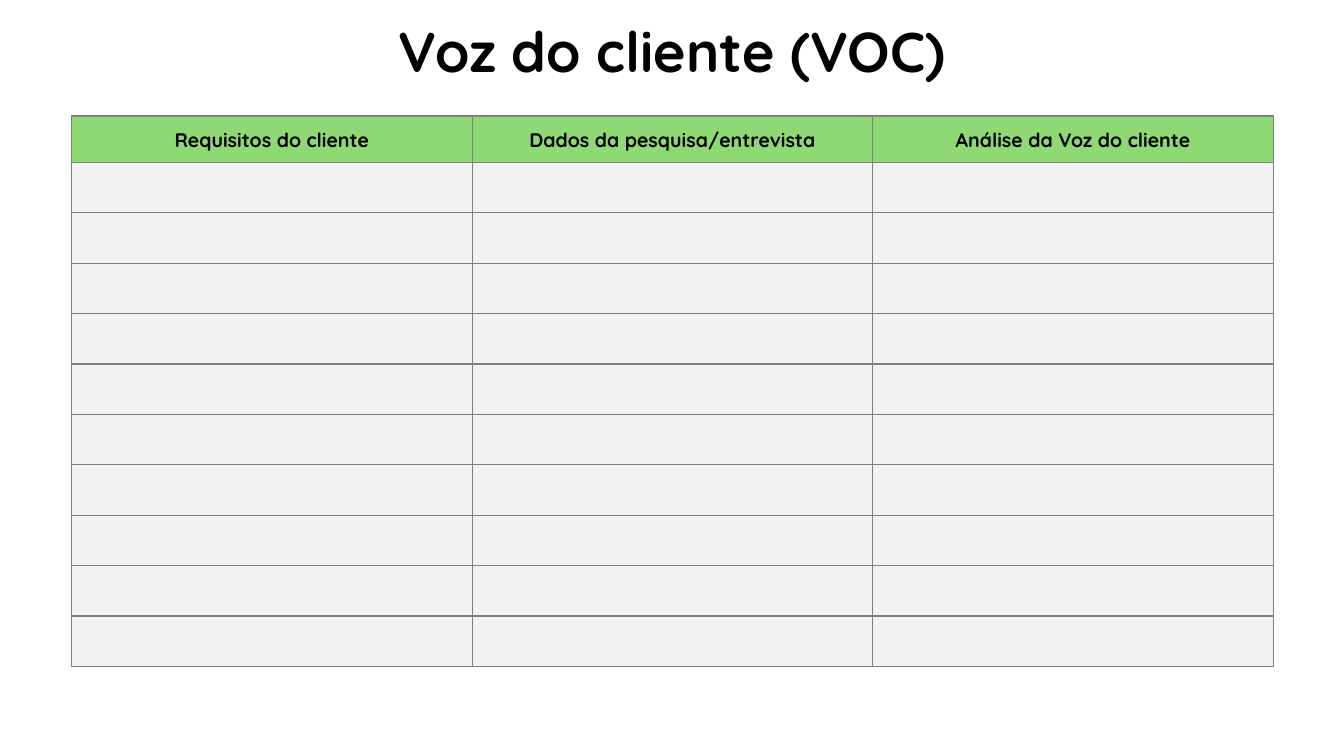
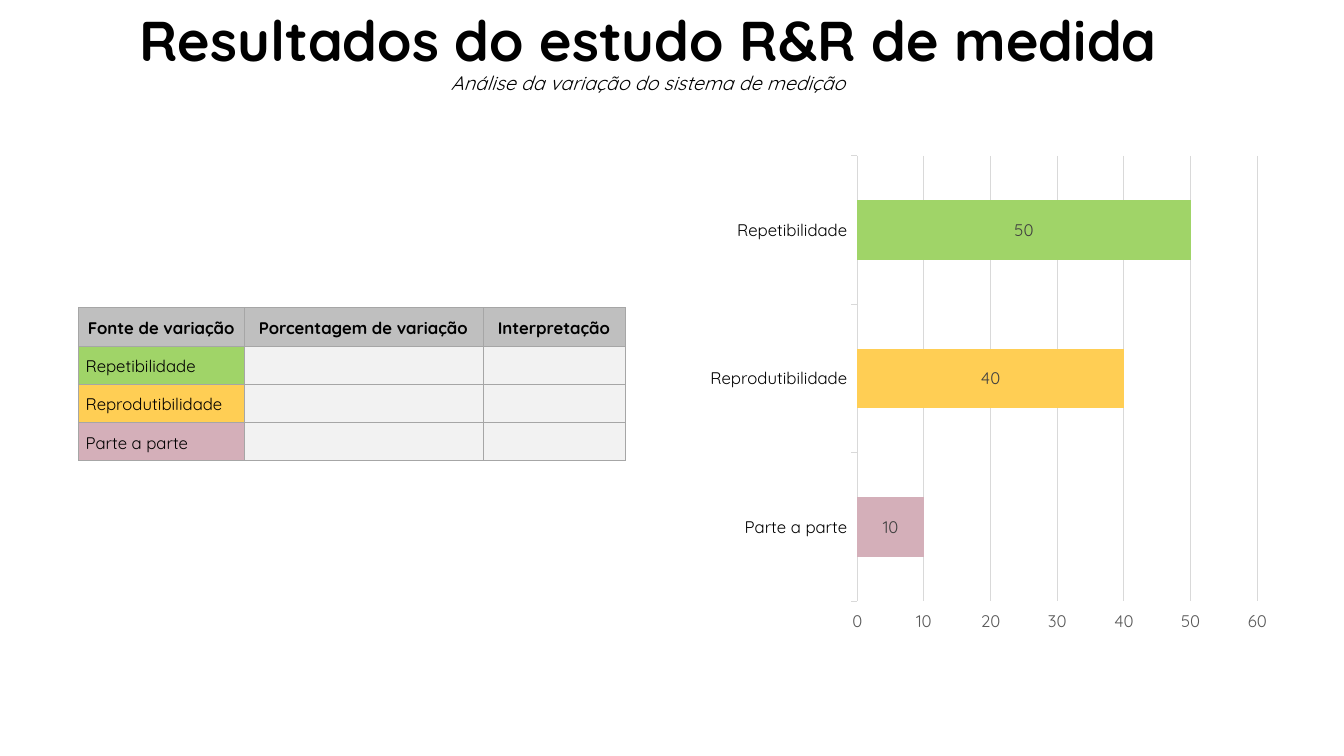
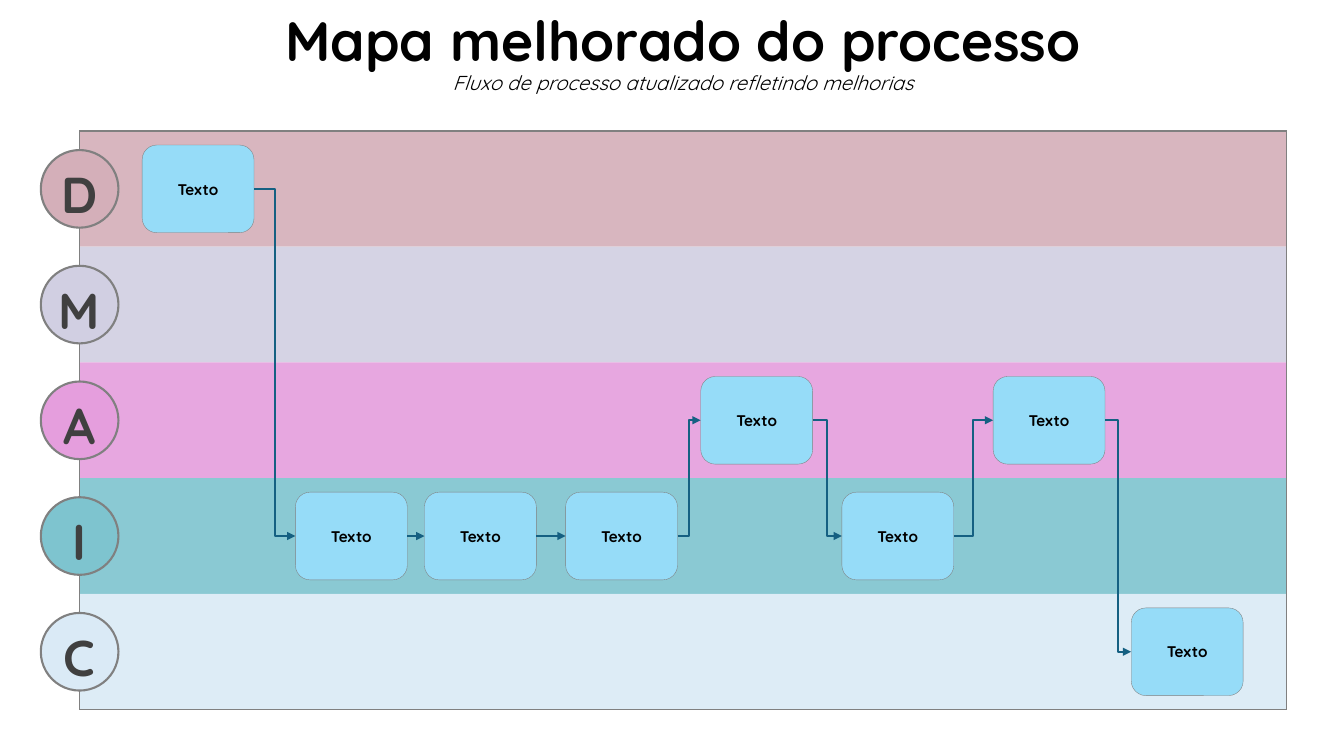
from copy import deepcopy

from lxml import etree
from pptx import Presentation
from pptx.chart.data import CategoryChartData
from pptx.dml.color import RGBColor
from pptx.enum.chart import XL_CHART_TYPE, XL_LABEL_POSITION, XL_TICK_MARK
from pptx.enum.shapes import MSO_CONNECTOR, MSO_SHAPE
from pptx.enum.text import MSO_ANCHOR, MSO_AUTO_SIZE, PP_ALIGN
from pptx.oxml.ns import qn
from pptx.util import Inches, Pt

LEFT, CENTER = PP_ALIGN.LEFT, PP_ALIGN.CENTER
TOP, MIDDLE = MSO_ANCHOR.TOP, MSO_ANCHOR.MIDDLE
NO_AUTOFIT = MSO_AUTO_SIZE.NONE
ELLIPSE, ROUNDED = MSO_SHAPE.OVAL, MSO_SHAPE.ROUNDED_RECTANGLE
STRAIGHT, ELBOW = MSO_CONNECTOR.STRAIGHT, MSO_CONNECTOR.ELBOW
BAR_STACKED = XL_CHART_TYPE.BAR_STACKED
LABEL_CENTER = XL_LABEL_POSITION.CENTER
TICK_OUTSIDE = XL_TICK_MARK.OUTSIDE

FONT = "Quicksand"
BLACK = RGBColor(0x00, 0x00, 0x00)
CHARCOAL = RGBColor(0x40, 0x40, 0x40)
AXIS_GRAY = RGBColor(0x59, 0x59, 0x59)
GRAY = RGBColor(0x80, 0x80, 0x80)
BORDER_GRAY = RGBColor(0xA6, 0xA6, 0xA6)
HEADER_GRAY = RGBColor(0xBF, 0xBF, 0xBF)
GRID_GRAY = RGBColor(0xD9, 0xD9, 0xD9)
PALE_GRAY = RGBColor(0xF2, 0xF2, 0xF2)
HEADER_GREEN = RGBColor(0x8E, 0xD9, 0x73)
GREEN = RGBColor(0xA0, 0xD4, 0x68)
YELLOW = RGBColor(0xFF, 0xCE, 0x54)
ROSE = RGBColor(0xD4, 0xAF, 0xB9)
LILAC = RGBColor(0xD1, 0xCF, 0xE2)
ORCHID = RGBColor(0xE5, 0x9E, 0xDD)
TEAL = RGBColor(0x7E, 0xC4, 0xCF)
ICE = RGBColor(0xDA, 0xEA, 0xF6)
STEP_BLUE = RGBColor(0x96, 0xDC, 0xF8)
ARROW_BLUE = RGBColor(0x15, 0x60, 0x82)

PLAIN_TABLE_STYLE = "{2D5ABB26-0587-4C30-8999-92F81FD0307C}"
SIDES = "LRTB"

VOC_HEADERS = ["Requisitos do cliente", "Dados da pesquisa/entrevista",
               "Análise da Voz do cliente"]
VARIATION_HEADERS = ["Fonte de variação", "Porcentagem de variação", "Interpretação"]
SOURCES = [("Repetibilidade", 50, GREEN), ("Reprodutibilidade", 40, YELLOW),
           ("Parte a parte", 10, ROSE)]
LANES = [("D", ROSE), ("M", LILAC), ("A", ORCHID), ("I", TEAL), ("C", ICE)]
STEPS = [(1.41, 0), (2.93, 3), (4.21, 3), (5.61, 3),
         (6.95, 2), (8.35, 3), (9.85, 2), (11.22, 4)]


def style_font(font, size, color=BLACK, bold=False, italic=False):
    """Apply the deck's typeface with a size, colour and weight."""
    font.name = FONT
    font.size = Pt(size)
    font.color.rgb = color
    font.bold = bold
    font.italic = italic


def write(frame, text, size, color=BLACK, bold=False, align=CENTER, spacing=None):
    """Put one formatted paragraph into a text frame."""
    frame.text = text
    para = frame.paragraphs[0]
    para.alignment = align
    para.line_spacing = spacing
    for span in para.runs:
        style_font(span.font, size, color, bold)


def add_page(deck, box, title, subtitle=None, sizes=(40, 14)):
    """Add a page with a centred title and an optional italic subtitle."""
    page = deck.slides.add_slide(deck.slide_layouts[5])
    holder = page.shapes.title
    holder.left, holder.top, holder.width, holder.height = map(Inches, box)
    frame = holder.text_frame
    frame.word_wrap = True
    frame.auto_size = NO_AUTOFIT
    frame.vertical_anchor = MIDDLE
    write(frame, title, sizes[0], bold=True, spacing=0.9)
    if subtitle:
        para = frame.paragraphs[0]
        para.add_line_break()
        line_break = para._p.find(qn("a:br"))
        line_break.append(deepcopy(para.runs[0]._r.find(qn("a:rPr"))))
        span = para.add_run()
        span.text = subtitle
        style_font(span.font, sizes[1], italic=True)
    return page


def add_grid(page, left, top, widths, heights):
    """Add a table without a banded style and return it."""
    holder = page.shapes.add_table(
        len(heights), len(widths), Inches(left), Inches(top),
        Inches(sum(widths)), Inches(sum(heights)))
    grid = holder.table
    grid.first_row = grid.horz_banding = False
    grid._tbl.tblPr.find(qn("a:tableStyleId")).text = PLAIN_TABLE_STYLE
    for column, width in zip(grid.columns, widths):
        column.width = Inches(width)
    for row, height in zip(grid.rows, heights):
        row.height = Inches(height)
    return grid


def paint_cell(cell, fill, border, weight, sides=SIDES, opacity=None):
    """Fill a cell and draw a border on the chosen sides."""
    properties = cell._tc.get_or_add_tcPr()
    for side in SIDES:
        line = etree.SubElement(properties, qn("a:ln" + side), w=str(Pt(weight)))
        if side in sides:
            solid = etree.SubElement(line, qn("a:solidFill"))
            etree.SubElement(solid, qn("a:srgbClr"), val=str(border))
        else:
            etree.SubElement(line, qn("a:noFill"))
    cell.fill.solid()
    cell.fill.fore_color.rgb = fill
    if opacity:
        color = properties.find(qn("a:solidFill")).find(qn("a:srgbClr"))
        etree.SubElement(color, qn("a:alpha"), val=str(opacity * 1000))


def write_cell(cell, text, size, margin, anchor, **style):
    """Write into a cell, or set the text size of an empty one."""
    cell.margin_left = cell.margin_right = Inches(margin)
    cell.margin_top = cell.margin_bottom = Inches(margin)
    cell.vertical_anchor = anchor
    if text:
        write(cell.text_frame, text, size, **style)
    else:
        para = cell.text_frame.paragraphs[0]
        etree.SubElement(para._p, qn("a:endParaRPr"), sz=str(size * 100))


def add_voc_table(page, left, top, width):
    """Add the customer voice form with ten empty rows."""
    count = len(VOC_HEADERS)
    grid = add_grid(page, left, top, [width / count] * count, [0.46] + [0.5] * 10)
    for row_index, row in enumerate(grid.rows):
        for cell, header in zip(row.cells, VOC_HEADERS):
            is_header = row_index == 0
            paint_cell(cell, HEADER_GREEN if is_header else PALE_GRAY, GRAY, 1)
            write_cell(cell, header if is_header else "", 14, 0.1, MIDDLE,
                       bold=True, spacing=1.07)


def add_variation_table(page, left, top):
    """Add the table of variation sources."""
    rows = [[(header, HEADER_GRAY) for header in VARIATION_HEADERS]]
    rows += [[(name, color), ("", PALE_GRAY), ("", PALE_GRAY)]
             for name, _, color in SOURCES]
    grid = add_grid(page, left, top, [1.64, 2.37, 1.41], [0.38] * len(rows))
    for row_index, row in enumerate(rows):
        is_header = row_index == 0
        for column_index, (text, fill) in enumerate(row):
            cell = grid.cell(row_index, column_index)
            paint_cell(cell, fill, BORDER_GRAY, 0.25)
            write_cell(cell, text, 12, 0.07, TOP, bold=is_header,
                       align=CENTER if is_header else LEFT, spacing=1.15)


def add_variation_chart(page, left, top, width, height):
    """Add the bar chart of variation sources, first source on top."""
    bars = SOURCES[::-1]
    data = CategoryChartData()
    data.categories = [name for name, _, _ in bars]
    data.add_series("Series 1", [value for _, value, _ in bars])
    chart = page.shapes.add_chart(
        BAR_STACKED, Inches(left), Inches(top), Inches(width), Inches(height), data).chart
    chart.has_legend = chart.has_title = False
    style_font(chart.font, 10)

    plot = chart.plots[0]
    plot.gap_width, plot.overlap = 150, 100
    plot.vary_by_categories = False
    plot.has_data_labels = True
    labels = plot.data_labels
    labels.show_value = True
    labels.position = LABEL_CENTER
    style_font(labels.font, 12, CHARCOAL)
    series = plot.series[0]
    series.format.fill.solid()
    series.format.fill.fore_color.rgb = YELLOW
    for index, (_, _, color) in enumerate(bars):
        fill = series.points[index].format.fill
        fill.solid()
        fill.fore_color.rgb = color

    names, values = chart.category_axis, chart.value_axis
    names.major_tick_mark = values.major_tick_mark = TICK_OUTSIDE
    style_font(names.tick_labels.font, 12)
    style_font(values.tick_labels.font, 12, AXIS_GRAY)
    values.minimum_scale, values.maximum_scale, values.major_unit = 0, 60, 10
    values.format.line.fill.background()
    values.has_major_gridlines = True
    for line in (names.format.line, values.major_gridlines.format.line):
        line.color.rgb = GRID_GRAY
        line.width = Pt(0.75)


def add_node(page, kind, center_x, center_y, width, height, fill, weight):
    """Add a gray-edged shape around a centre point."""
    node = page.shapes.add_shape(
        kind, Inches(center_x - width / 2), Inches(center_y - height / 2),
        Inches(width), Inches(height))
    node.shadow.inherit = False
    node.fill.solid()
    node.fill.fore_color.rgb = fill
    node.line.color.rgb = GRAY
    node.line.width = Pt(weight)
    node.text_frame.vertical_anchor = MIDDLE
    node.text_frame.word_wrap = True
    return node


def add_arrow(page, start, end, kind):
    """Join the right side of one step to the left side of the next."""
    arrow = page.shapes.add_connector(kind, 0, 0, 0, 0)
    arrow.begin_connect(start, 3)
    arrow.end_connect(end, 1)
    arrow.line.color.rgb = ARROW_BLUE
    arrow.line.width = Pt(1.5)
    etree.SubElement(arrow.line._get_or_add_ln(), qn("a:tailEnd"), type="triangle")
    etree.SubElement(arrow._element.spPr, qn("a:effectLst"))


def add_process_map(page, left, top, width, height):
    """Add the coloured lanes, their letters and the linked steps."""
    lane_height = height / len(LANES)
    centers = [top + lane_height * (index + 0.5) for index in range(len(LANES))]
    grid = add_grid(page, left, top, [width], [lane_height] * len(LANES))
    edges = {0: "LRT", len(LANES) - 1: "LRB"}
    for index, (letter, color) in enumerate(LANES):
        paint_cell(grid.cell(index, 0), color, GRAY, 1, edges.get(index, "LR"), 90)
        badge = add_node(page, ELLIPSE, left, centers[index], 0.77, 0.77, color, 1.5)
        frame = badge.text_frame
        frame.margin_left = frame.margin_right = 0
        frame.margin_top = frame.margin_bottom = 0
        write(frame, letter, 36, CHARCOAL, True, spacing=1.15)

    step_width = 1.11
    steps = []
    for step_left, lane in STEPS:
        step = add_node(page, ROUNDED, step_left + step_width / 2, centers[lane],
                        step_width, 0.87, STEP_BLUE, 0.25)
        write(step.text_frame, "Texto", 11, bold=True)
        steps.append(step)
    for start, end in zip(steps, steps[1:]):
        add_arrow(page, start, end, STRAIGHT if start.top == end.top else ELBOW)


def main():
    """Build and save the three pages."""
    deck = Presentation()
    deck.slide_width, deck.slide_height = Inches(13.33), Inches(7.5)

    voc = add_page(deck, (2.34, 0, 8.65, 1.08), "Voz do cliente (VOC)")
    add_voc_table(voc, 0.71, 1.15, 11.92)

    study = add_page(deck, (1.26, 0, 10.34, 1.08), "Resultados do estudo R&R de medida",
                     "Análise da variação do sistema de medição")
    add_variation_chart(study, 6.93, 1.45, 5.75, 4.92)
    add_variation_table(study, 0.78, 3.05)

    process = add_page(deck, (2.35, 0, 8.85, 1.08), "Mapa melhorado do processo",
                       "Fluxo de processo atualizado refletindo melhorias", (39.6, 14.4))
    add_process_map(process, 0.79, 1.3, 11.97, 5.74)

    deck.save("out.pptx")


if __name__ == "__main__":
    main()
